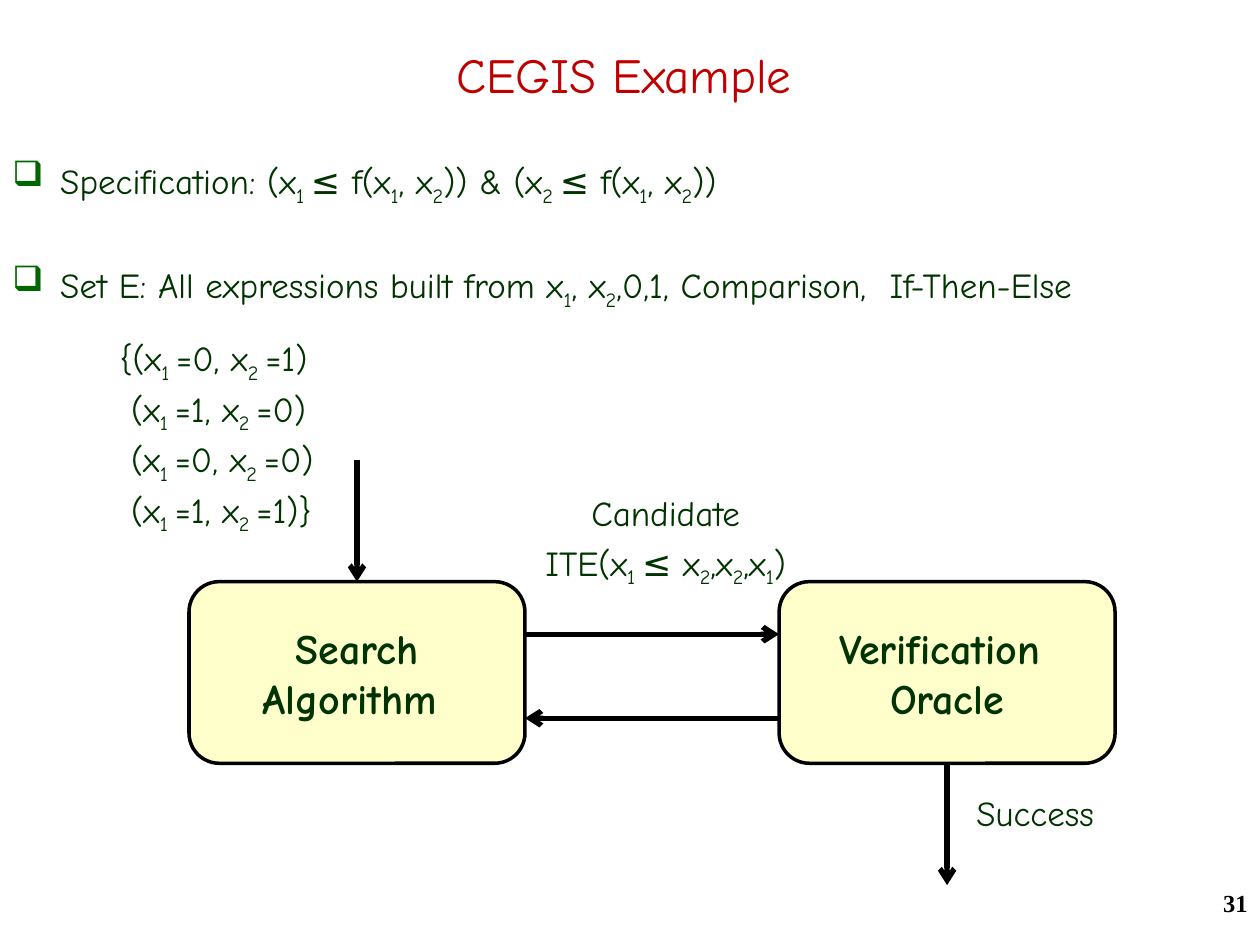
from lxml.etree import SubElement
from pptx import Presentation
from pptx.dml.color import RGBColor as RGB
from pptx.enum.shapes import MSO_CONNECTOR as CONN, MSO_SHAPE as SHAPE
from pptx.enum.text import MSO_ANCHOR as ANCHOR, PP_ALIGN as ALIGN
from pptx.oxml.ns import qn
from pptx.util import Inches, Pt

COLORS = {"title": "C00000", "text": "003300", "bullet": "006600",
          "box": "FFFFCC", "line": "000000"}
FONT = "Comic Neue"

prs = Presentation()
prs.slide_width, prs.slide_height = Inches(10), Inches(7.5)
U = prs.slide_width / 120  # grid of 120 columns by 90 rows
s = prs.slides.add_slide(prs.slide_layouts[5])


def add_text(cell, lines, align=ALIGN.LEFT, gap=7):
    """Add a text box; "_" lowers the next character and a space after it."""
    tf = s.shapes.add_textbox(*(round(v * U) for v in cell)).text_frame
    tf.word_wrap = True
    for i, line in enumerate(lines):
        p = tf.paragraphs[0] if i == 0 else tf.add_paragraph()
        p.alignment, p.line_spacing = align, 0.8
        p.space_before = Pt(gap if i else 7)
        start, *parts = line.split("_")
        pieces = [(start, False)]
        for part in parts:
            n = 2 if part[1:2] == " " else 1
            pieces += [(part[:n], True), (part[n:], False)]
        for text, lowered in pieces:
            r = p.add_run()
            r.text = text
            r.font.size, r.font.name = Pt(20), FONT
            r.font.color.rgb = RGB.from_string(COLORS["text"])
            if lowered:
                r._r.get_or_add_rPr().set("baseline", "-25000")
    return tf


def add_arrow(x1, y1, x2, y2):
    c = s.shapes.add_connector(CONN.STRAIGHT, *(round(v * U) for v in (x1, y1, x2, y2)))
    c.line.width = Pt(3)
    c.line.color.rgb = RGB.from_string(COLORS["line"])
    SubElement(c.line._get_or_add_ln(), qn("a:tailEnd"), type="arrow")
    SubElement(c._element.spPr, qn("a:effectLst"))
    return c


# Title
title = s.shapes.title
title.left, title.top, title.width, title.height = (round(v * U) for v in (8, 3, 102.8, 8))
tf = title.text_frame
tf.text = "CEGIS Example"
tf.vertical_anchor = ANCHOR.MIDDLE
p = tf.paragraphs[0]
p.alignment = ALIGN.CENTER
font = p.runs[0].font
font.size, font.name = Pt(28), FONT
font.color.rgb = RGB.from_string(COLORS["title"])

# Bulleted problem statement
tf = add_text((0, 15, 120, 22), [
    "Specification: (x_1 ≤ f(x_1, x_2)) & (x_2 ≤ f(x_1, x_2))",
    "Set E: All expressions built from x_1, x_2,0,1, Comparison,  If-Then-Else",
], gap=38)
for p in tf.paragraphs:
    pPr = p._p.get_or_add_pPr()
    pPr.set("marL", str(Inches(0.38)))
    pPr.set("indent", str(-Inches(0.38)))
    SubElement(SubElement(pPr, qn("a:buClr")), qn("a:srgbClr"), val=COLORS["bullet"])
    SubElement(pPr, qn("a:buChar"), char="❑")

# Search and verification boxes
BOX_TOP, BOX_W, BOX_H = 55.4, 32, 17.3
SEARCH_X, ORACLE_X = 18, 74.2
boxes = []
for x, label in ((SEARCH_X, "Search\nAlgorithm "), (ORACLE_X, "Verification \nOracle")):
    sp = s.shapes.add_shape(SHAPE.ROUNDED_RECTANGLE,
                            *(round(v * U) for v in (x, BOX_TOP, BOX_W, BOX_H)))
    sp.shadow.inherit = False
    sp.fill.solid()
    sp.fill.fore_color.rgb = RGB.from_string(COLORS["box"])
    sp.line.color.rgb = RGB.from_string(COLORS["line"])
    sp.line.width = Pt(2)
    tf = sp.text_frame
    tf.text = label
    tf.word_wrap = False
    tf.vertical_anchor = ANCHOR.MIDDLE
    for p in tf.paragraphs:
        p.alignment = ALIGN.CENTER
        font = p.runs[0].font
        font.size, font.name, font.bold = Pt(24), FONT, True
        font.color.rgb = RGB.from_string(COLORS["text"])
    boxes.append(sp)
search, oracle = boxes

# Arrows in, between and out of the boxes
ARROW_H = 11.6
mid_search, mid_oracle = SEARCH_X + BOX_W / 2, ORACLE_X + BOX_W / 2
search_right, box_bottom = SEARCH_X + BOX_W, BOX_TOP + BOX_H
add_arrow(mid_search, BOX_TOP - ARROW_H, mid_search, BOX_TOP).end_connect(search, 0)
add_arrow(search_right, BOX_TOP + 5, ORACLE_X, BOX_TOP + 5)
add_arrow(ORACLE_X, BOX_TOP + 13, search_right, BOX_TOP + 13)
add_arrow(mid_oracle, box_bottom, mid_oracle, box_bottom + ARROW_H).begin_connect(oracle, 2)

# Arrow labels
add_text((10.2, 31.9, 26.8, 23.9), ["{(x_1 =0, x_2 =1)", " (x_1 =1, x_2 =0)",
                                    " (x_1 =0, x_2 =0)", " (x_1 =1, x_2 =1)}"])
add_text((47.8, 47, 31.2, 10.9), ["Candidate", "ITE(x_1 ≤ x_2,x_2,x_1)"], ALIGN.CENTER)
add_text((91.8, 75.6, 20, 5.5), ["Success"])

# Slide number
tf = s.shapes.add_textbox(*(round(v * U) for v in (95, 84, 25, 6))).text_frame
tf.word_wrap = True
tf.text = "31"
p = tf.paragraphs[0]
p.alignment = ALIGN.RIGHT
font = p.runs[0].font
font.size, font.name, font.bold = Pt(14), "Times New Roman", True
font.color.rgb = RGB.from_string(COLORS["line"])

prs.save("out.pptx")
